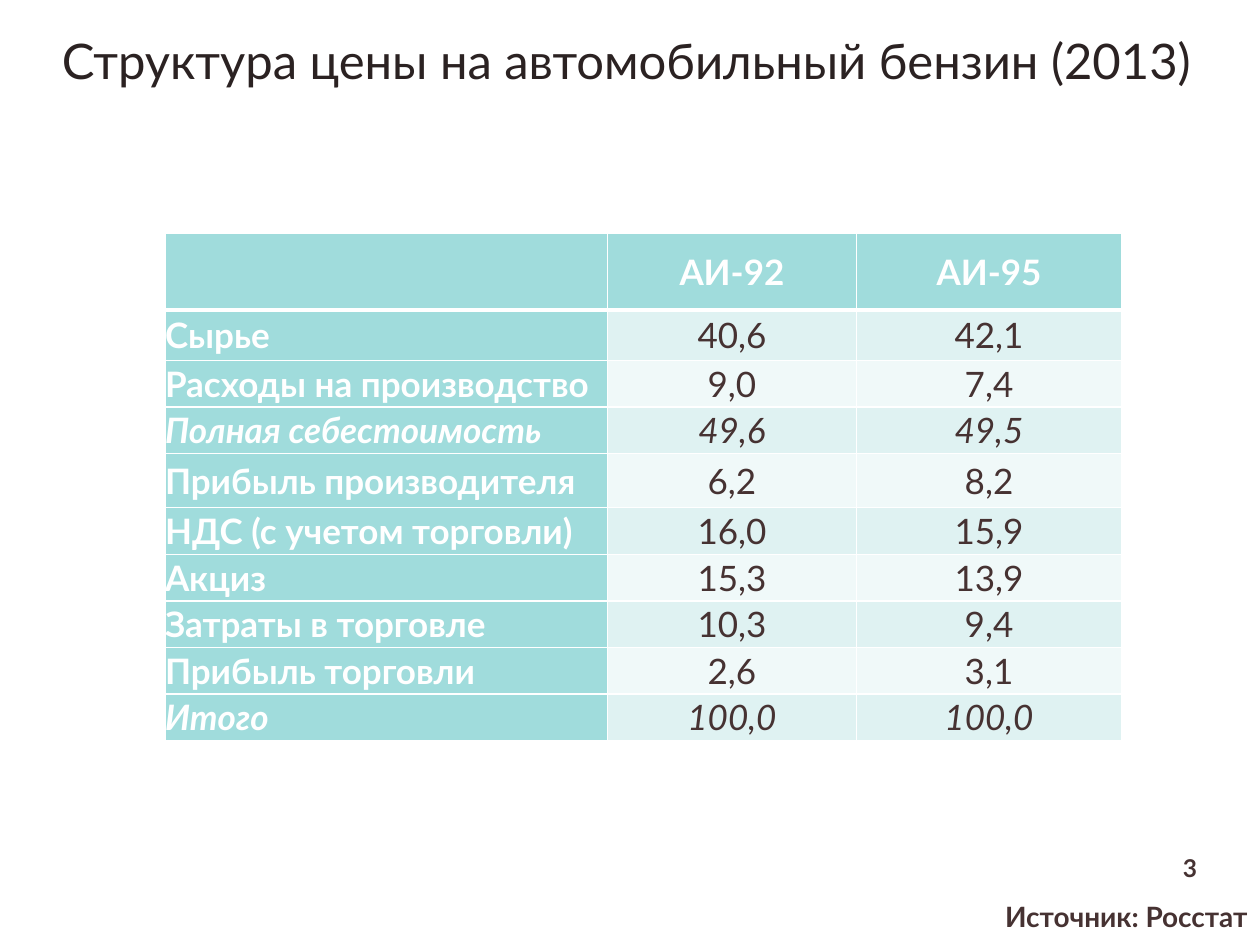
from lxml.etree import SubElement
from pptx import Presentation
from pptx.dml.color import RGBColor
from pptx.enum.text import MSO_ANCHOR as Anchor, PP_ALIGN as Align
from pptx.oxml.ns import qn
from pptx.util import Inches, Pt

FONT = "Lato"
COLORS = {
    "title": "2B2222",
    "text": "463232",
    "white": "FFFFFF",
    "header": "A0DCDC",
    "odd": "DFF2F2",
    "even": "F0F9F9",
}
COLUMN_WIDTHS = [3.51, 1.98, 2.1]
ROW_HEIGHTS = [0.61, 0.4, 0.37, 0.37, 0.43] + [0.37] * 5
PRICE_ROWS = [
    ("", "АИ-92", "АИ-95"),
    ("Сырье", "40,6", "42,1"),
    ("Расходы на производство", "9,0", "7,4"),
    ("Полная себестоимость", "49,6", "49,5"),
    ("Прибыль производителя", "6,2", "8,2"),
    ("НДС (с учетом торговли)", "16,0", "15,9"),
    ("Акциз", "15,3", "13,9"),
    ("Затраты в торговле", "10,3", "9,4"),
    ("Прибыль торговли", "2,6", "3,1"),
    ("Итого", "100,0", "100,0"),
]
TOTAL_ROWS = {3, 9}


def color(name):
    return RGBColor.from_string(COLORS[name])


def write(frame, text, size, color_name, align, bold=False, italic=False):
    paragraph = frame.paragraphs[0]
    paragraph.alignment = align
    run = paragraph.add_run()
    run.text = text
    font = run.font
    font.name, font.size = FONT, Pt(size)
    font.bold, font.italic = bold, italic
    font.color.rgb = color(color_name)


def add_title(slide, text):
    title = slide.shapes.title
    title.left, title.top = Inches(0.39), Inches(0.19)
    title.width, title.height = Inches(9.21), Inches(1.18)
    title.text_frame.vertical_anchor = Anchor.TOP
    write(title.text_frame, text, 28, "title", Align.LEFT)


def add_label(slide, text, box, size, anchor):
    label = slide.shapes.add_textbox(*map(Inches, box))
    frame = label.text_frame
    frame.word_wrap = True
    frame.vertical_anchor = anchor
    write(frame, text, size, "text", Align.RIGHT, bold=True)


def set_borders(cell, top=1, bottom=1):
    properties = cell._tc.get_or_add_tcPr()
    widths = {"L": 1, "R": 1, "T": top, "B": bottom}
    for position, (side, width) in enumerate(widths.items()):
        line = SubElement(properties, qn(f"a:ln{side}"), w=str(Pt(width)))
        fill = SubElement(line, qn("a:solidFill"))
        SubElement(fill, qn("a:srgbClr"), val=COLORS["white"])
        # Borders come before the cell fill
        properties.insert(position, line)


def format_cell(cell, text, row, column):
    heading = row == 0 or column == 0
    cell.margin_left = cell.margin_right = 0
    cell.margin_top = cell.margin_bottom = 0
    cell.vertical_anchor = Anchor.MIDDLE
    cell.fill.solid()
    band = "odd" if row % 2 else "even"
    cell.fill.fore_color.rgb = color("header" if heading else band)
    set_borders(cell, top=3 if row == 1 else 1, bottom=3 if row == 0 else 1)
    if text:
        write(cell.text_frame, text, 20, "white" if heading else "text",
              Align.CENTER if column else Align.LEFT,
              bold=heading, italic=row in TOTAL_ROWS)


def add_price_table(slide, left, top):
    frame = slide.shapes.add_table(
        len(ROW_HEIGHTS), len(COLUMN_WIDTHS), Inches(left), Inches(top),
        Inches(sum(COLUMN_WIDTHS)), Inches(sum(ROW_HEIGHTS)))
    table = frame.table
    for column, width in zip(table.columns, COLUMN_WIDTHS):
        column.width = Inches(width)
    for row, height in zip(table.rows, ROW_HEIGHTS):
        row.height = Inches(height)
    for row, values in enumerate(PRICE_ROWS):
        for column, text in enumerate(values):
            format_cell(table.cell(row, column), text, row, column)


def main():
    presentation = Presentation()
    presentation.slide_width, presentation.slide_height = Inches(10), Inches(7.5)
    slide = presentation.slides.add_slide(presentation.slide_layouts[5])

    add_title(slide, "Структура цены на автомобильный бензин (2013)")
    # Page number
    add_label(slide, "3", (9.13, 6.69, 0.47, 0.39), 14, Anchor.MIDDLE)
    add_price_table(slide, 1.31, 1.85)
    # Source line
    add_label(slide, "Источник: Росстат", (6.03, 7.09, 3.97, 0.37), 16, Anchor.TOP)

    presentation.save("out.pptx")


if __name__ == "__main__":
    main()
